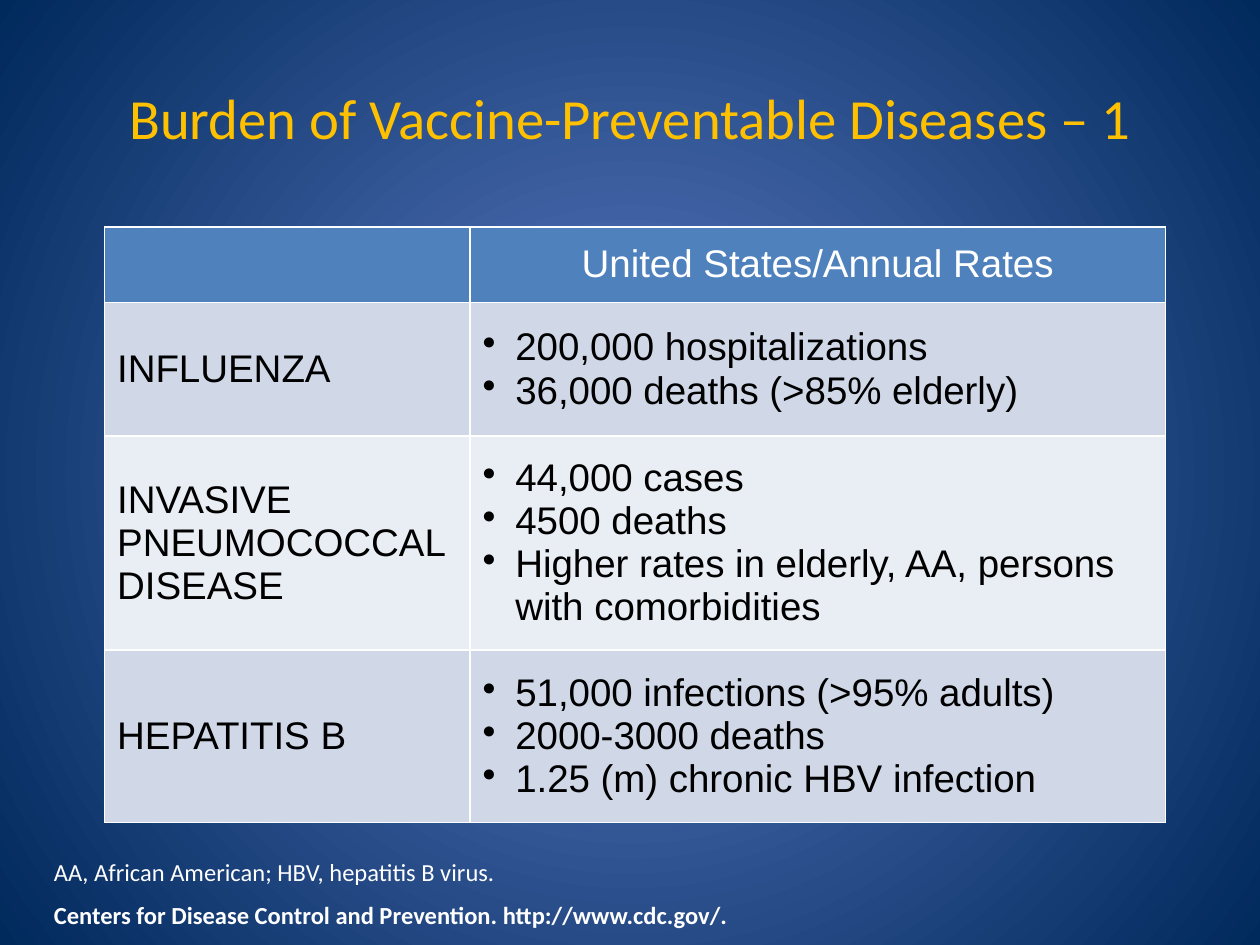
from dataclasses import dataclass

from lxml import etree
from pptx import Presentation
from pptx.dml.color import RGBColor
from pptx.enum.text import MSO_ANCHOR, PP_ALIGN
from pptx.oxml.ns import qn
from pptx.util import Inches, Pt

CENTER, LEFT = PP_ALIGN.CENTER, PP_ALIGN.LEFT
MIDDLE = MSO_ANCHOR.MIDDLE
TITLE_ONLY = 5


@dataclass(frozen=True)
class Theme:
    heading_font: str = "Calibri"
    table_font: str = "Arial"
    title_size: float = 32.4
    table_size: float = 22
    note_size: float = 14
    glow: str = "5E7CC5"
    navy: str = "00295C"
    gold: str = "FFC000"
    white: str = "FFFFFF"
    black: str = "000000"
    header: str = "4F81BD"
    bands: tuple = ("D0D8E8", "E9EDF4")


THEME = Theme()
BULLET_INDENT = Inches(0.26)
COLUMNS = (2.9, 5.52)
ROWS = (0.6, 1.06, 1.7, 1.37)
BURDEN = [
    ("INFLUENZA", ["200,000 hospitalizations", "36,000 deaths (>85% elderly)"]),
    ("INVASIVE PNEUMOCOCCAL DISEASE",
     ["44,000 cases", "4500 deaths",
      "Higher rates in elderly, AA, persons with comorbidities"]),
    ("HEPATITIS B",
     ["51,000 infections (>95% adults)", "2000-3000 deaths",
      "1.25 (m) chronic HBV infection"]),
]
NOTES = [
    ("AA, African American; HBV, hepatitis B virus.", False),
    ("Centers for Disease Control and Prevention. http://www.cdc.gov/.", True),
]


def style(paragraph, font, size, color, bold=False, align=LEFT):
    paragraph.alignment = align
    paragraph.font.name = font
    paragraph.font.size = Pt(size)
    paragraph.font.bold = bold
    paragraph.font.color.rgb = RGBColor.from_string(color)


def add_bullet(paragraph):
    properties = paragraph._p.get_or_add_pPr()
    properties.set("marL", str(BULLET_INDENT))
    properties.set("indent", str(-BULLET_INDENT))
    bullet = etree.Element(qn("a:buChar"), char="•")
    properties.insert_element_before(bullet, "a:tabLst", "a:defRPr", "a:extLst")


def paint_background(slide):
    fill = slide.background.fill
    fill.gradient()
    for stop, color in zip(fill.gradient_stops, (THEME.glow, THEME.navy)):
        stop.color.rgb = RGBColor.from_string(color)
    linear = next(slide._element.iter(qn("a:lin")))
    gradient = linear.getparent()
    circle = etree.Element(qn("a:path"), path="circle")
    etree.SubElement(circle, qn("a:fillToRect"),
                     dict.fromkeys("ltrb", "50000"))
    gradient.replace(linear, circle)


def place_title(slide, box, text):
    title = slide.shapes.title
    title.left, title.top, title.width, title.height = map(Inches, box)
    title.text_frame.text = text
    title.text_frame.vertical_anchor = MIDDLE
    style(title.text_frame.paragraphs[0], THEME.heading_font,
          THEME.title_size, THEME.gold, align=CENTER)


def fill_cell(cell, lines, fill, color, align=LEFT, bulleted=False):
    cell.fill.solid()
    cell.fill.fore_color.rgb = RGBColor.from_string(fill)
    cell.vertical_anchor = MIDDLE
    cell.text_frame.text = "\n".join(lines)
    for paragraph in cell.text_frame.paragraphs:
        style(paragraph, THEME.table_font, THEME.table_size, color, align=align)
        if bulleted:
            add_bullet(paragraph)


def place_burden_table(slide, left, top):
    box = map(Inches, (left, top, sum(COLUMNS), sum(ROWS)))
    table = slide.shapes.add_table(len(ROWS), len(COLUMNS), *box).table
    for column, width in zip(table.columns, COLUMNS):
        column.width = Inches(width)
    for row, height in zip(table.rows, ROWS):
        row.height = Inches(height)
    for column, heading in enumerate(("", "United States/Annual Rates")):
        fill_cell(table.cell(0, column), [heading], THEME.header,
                  THEME.white, align=CENTER)
    for row, (disease, rates) in enumerate(BURDEN, 1):
        band = THEME.bands[(row - 1) % 2]
        fill_cell(table.cell(row, 0), [disease], band, THEME.black)
        fill_cell(table.cell(row, 1), rates, band, THEME.black, bulleted=True)


def place_notes(slide, left, top, width, row_height):
    for index, (text, bold) in enumerate(NOTES):
        box = map(Inches, (left, top + index * row_height, width, row_height))
        frame = slide.shapes.add_textbox(*box).text_frame
        frame.word_wrap = True
        frame.text = text
        style(frame.paragraphs[0], THEME.heading_font, THEME.note_size,
              THEME.white, bold=bold)


def main():
    deck = Presentation()
    deck.slide_width, deck.slide_height = Inches(10), Inches(7.5)
    slide = deck.slides.add_slide(deck.slide_layouts[TITLE_ONLY])
    paint_background(slide)
    place_title(slide, (0.5, 0.3, 9, 1.25),
                "Burden of Vaccine-Preventable Diseases – 1")
    place_burden_table(slide, 0.83, 1.8)
    place_notes(slide, 0.33, 6.75, 9, 0.34)
    deck.save("out.pptx")


if __name__ == "__main__":
    main()
